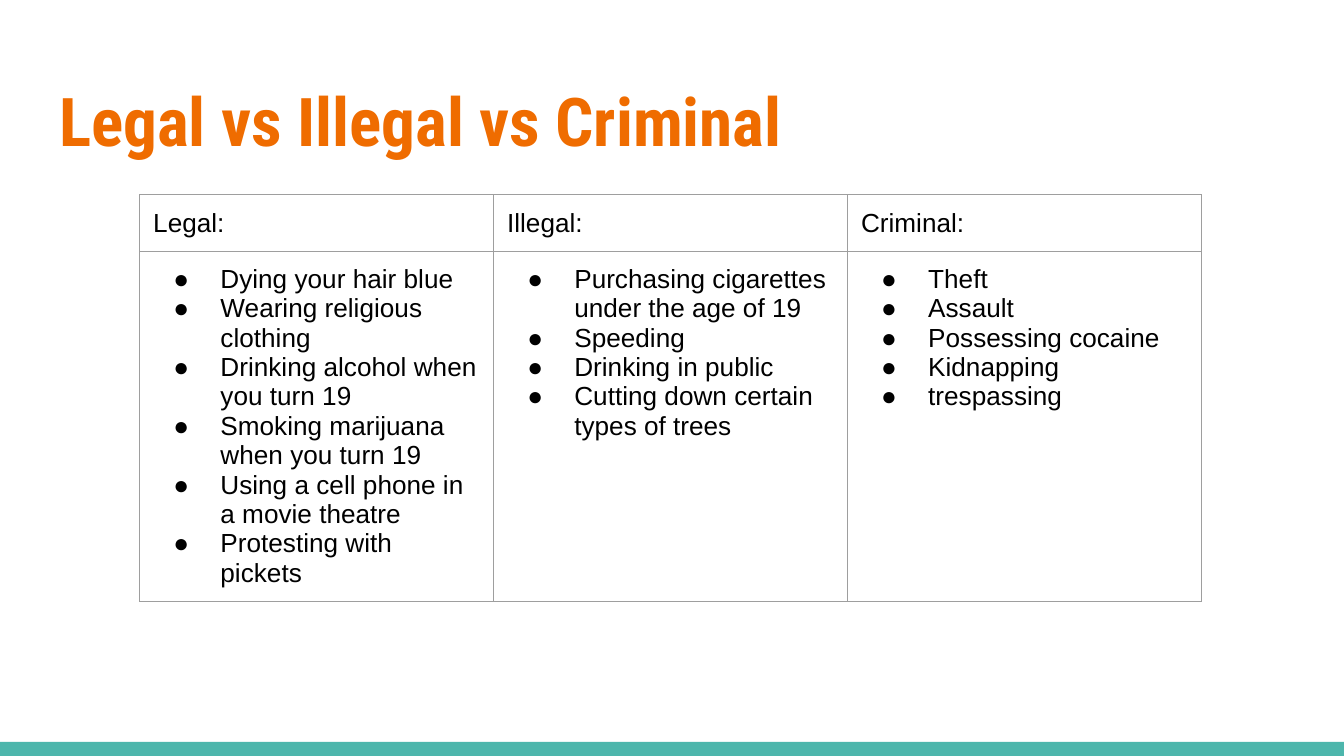
from lxml.etree import SubElement
from pptx import Presentation
from pptx.dml.color import RGBColor
from pptx.enum.shapes import MSO_SHAPE
from pptx.enum.text import MSO_ANCHOR, MSO_AUTO_SIZE, PP_ALIGN
from pptx.oxml import parse_xml
from pptx.oxml.ns import nsdecls, qn
from pptx.util import Inches, Pt

SLIDE_WIDTH = 10
SLIDE_HEIGHT = SLIDE_WIDTH * 9 / 16
INSET = 0.1
COLUMNS = {
    "Legal:": [
        "Dying your hair blue",
        "Wearing religious clothing",
        "Drinking alcohol when you turn 19",
        "Smoking marijuana when you turn 19",
        "Using a cell phone in a movie theatre",
        "Protesting with pickets",
    ],
    "Illegal:": [
        "Purchasing cigarettes under the age of 19",
        "Speeding",
        "Drinking in public",
        "Cutting down certain types of trees",
    ],
    "Criminal:": [
        "Theft",
        "Assault",
        "Possessing cocaine",
        "Kidnapping",
        "trespassing",
    ],
}


def color(hex_string):
    """Return the colour for a hex string."""
    return RGBColor.from_string(hex_string)


def write_text(paragraph, text, *, size=14, font="Arial", fill="000000", bold=False):
    """Add formatted, left-aligned text to a paragraph."""
    paragraph.alignment = PP_ALIGN.LEFT
    run = paragraph.add_run()
    run.text = text
    run.font.size = Pt(size)
    run.font.name = font
    run.font.bold = bold
    run.font.color.rgb = color(fill)


def add_bullet(paragraph, *, left=0.5, hanging=0.35, fill="000000"):
    """Give a paragraph a round bullet and a hanging indent."""
    properties = paragraph._p.get_or_add_pPr()
    properties.set("marL", str(Inches(left)))
    properties.set("indent", str(Inches(-hanging)))
    bullet_color = SubElement(properties, qn("a:buClr"))
    SubElement(bullet_color, qn("a:srgbClr"), val=fill)
    SubElement(properties, qn("a:buFont"), typeface="Arial")
    SubElement(properties, qn("a:buChar"), char="●")


def format_cell(cell, *, border="9E9E9E", width=0.75):
    """Set a cell's insets, empty fill and four borders."""
    cell.margin_left = cell.margin_right = Inches(INSET)
    cell.margin_top = cell.margin_bottom = Inches(INSET)
    cell.vertical_anchor = MSO_ANCHOR.TOP
    cell.fill.background()
    properties = cell._tc.get_or_add_tcPr()
    for position, side in enumerate(("lnL", "lnR", "lnT", "lnB")):
        line = parse_xml(
            f'<a:{side} {nsdecls("a")} w="{Pt(width)}"><a:solidFill>'
            f'<a:srgbClr val="{border}"/></a:solidFill></a:{side}>'
        )
        properties.insert(position, line)


def add_footer_bar(slide, left, top, width, height):
    """Draw the teal bar along the bottom edge."""
    bar = slide.shapes.add_shape(
        MSO_SHAPE.RECTANGLE, Inches(left), Inches(top), Inches(width), Inches(height)
    )
    bar.shadow.inherit = False
    bar.fill.solid()
    bar.fill.fore_color.rgb = color("4DB6AC")
    bar.line.fill.background()


def add_title(slide, text, left, top, width, height):
    """Place and format the title placeholder."""
    title = slide.shapes.title
    title.left, title.top = Inches(left), Inches(top)
    title.width, title.height = Inches(width), Inches(height)
    frame = title.text_frame
    frame.word_wrap = True
    frame.auto_size = MSO_AUTO_SIZE.NONE
    frame.vertical_anchor = MSO_ANCHOR.TOP
    frame.margin_left = frame.margin_right = Inches(INSET)
    frame.margin_top = frame.margin_bottom = Inches(INSET)
    write_text(
        frame.paragraphs[0], text, size=36, font="Roboto Condensed", fill="EF6C00", bold=True
    )


def add_comparison_table(slide, columns, left, top, width, height, header_height=0.42):
    """Draw a table with one heading and one bulleted list per column."""
    table = slide.shapes.add_table(
        2, len(columns), Inches(left), Inches(top), Inches(width), Inches(height)
    ).table
    table.first_row = table.horz_banding = False
    table.rows[0].height = Inches(header_height)
    table.rows[1].height = Inches(height - header_height)
    for index, (heading, items) in enumerate(columns.items()):
        table.columns[index].width = Inches(width / len(columns))
        header, body = table.cell(0, index), table.cell(1, index)
        format_cell(header)
        format_cell(body)
        write_text(header.text_frame.paragraphs[0], heading)
        frame = body.text_frame
        for number, item in enumerate(items):
            paragraph = frame.add_paragraph() if number else frame.paragraphs[0]
            write_text(paragraph, item)
            add_bullet(paragraph)


def main():
    """Build and save the slide."""
    presentation = Presentation()
    presentation.slide_width = Inches(SLIDE_WIDTH)
    presentation.slide_height = Inches(SLIDE_HEIGHT)
    slide = presentation.slides.add_slide(presentation.slide_layouts[5])
    slide.background.fill.solid()
    slide.background.fill.fore_color.rgb = color("FFFFFF")
    add_footer_bar(slide, 0, 5.52, SLIDE_WIDTH, SLIDE_HEIGHT - 5.52)
    add_title(slide, "Legal vs Illegal vs Criminal", 0.34, 0.49, 9.32, 0.77)
    add_comparison_table(slide, COLUMNS, 1.04, 1.45, 7.9, 3.02)
    presentation.save("out.pptx")


if __name__ == "__main__":
    main()
